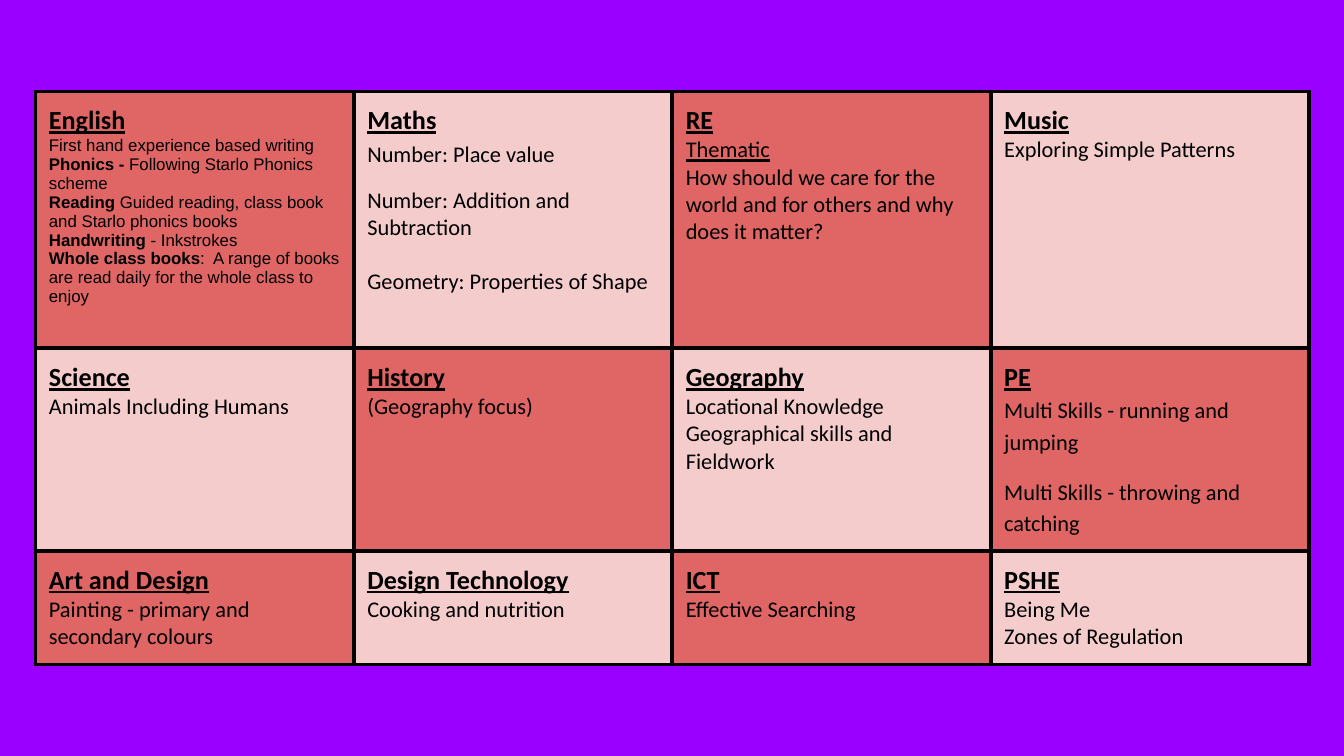
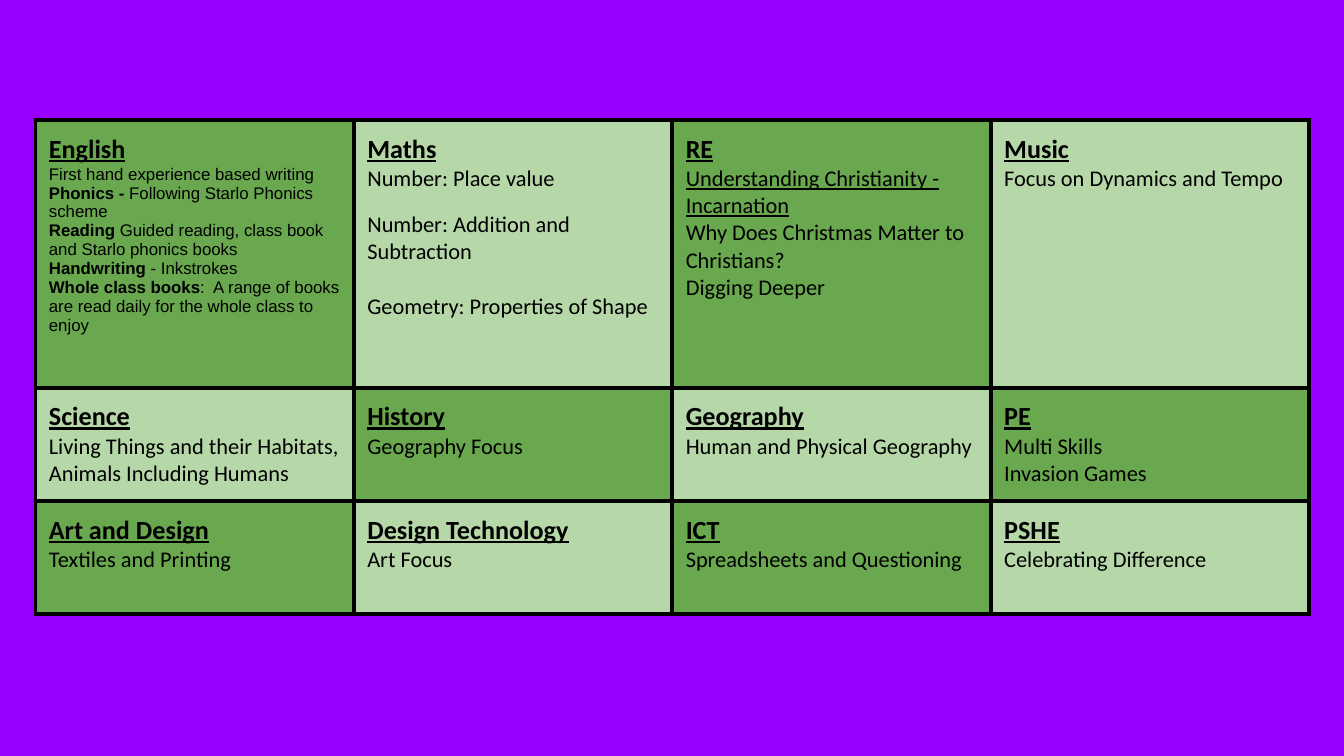
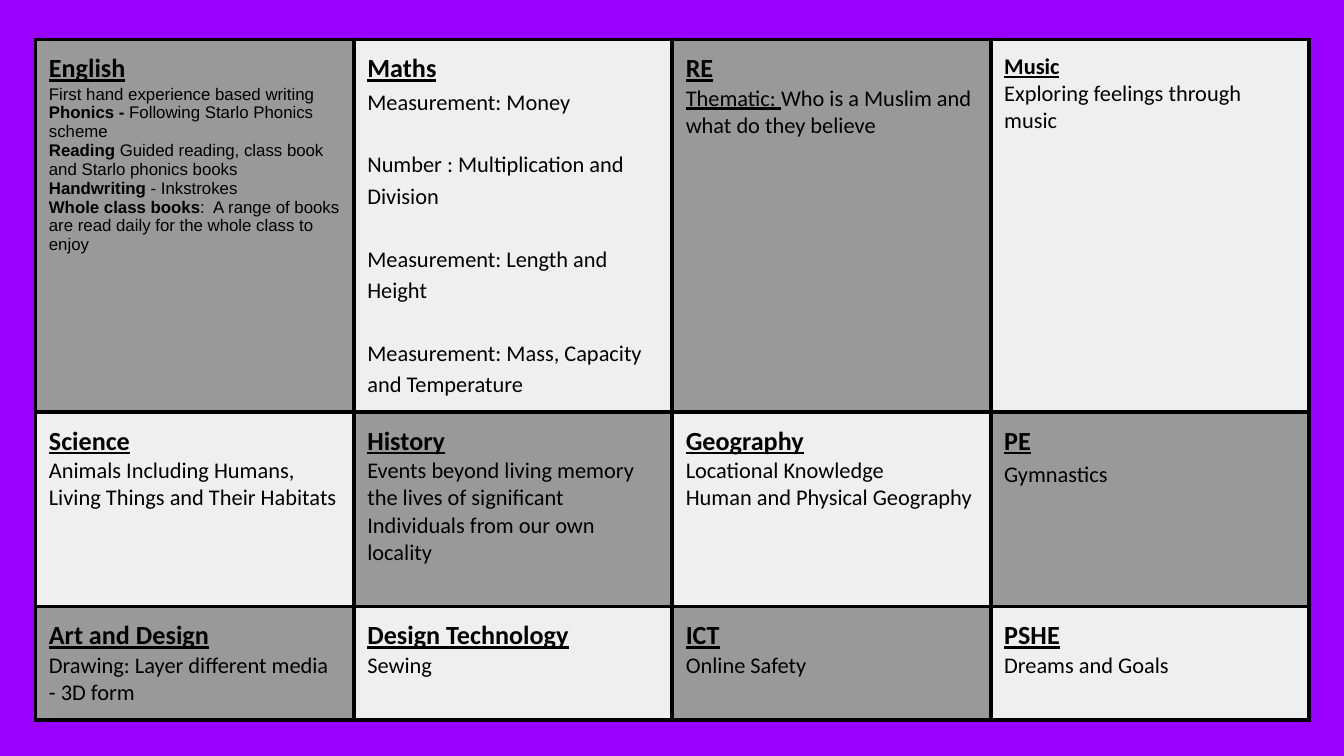
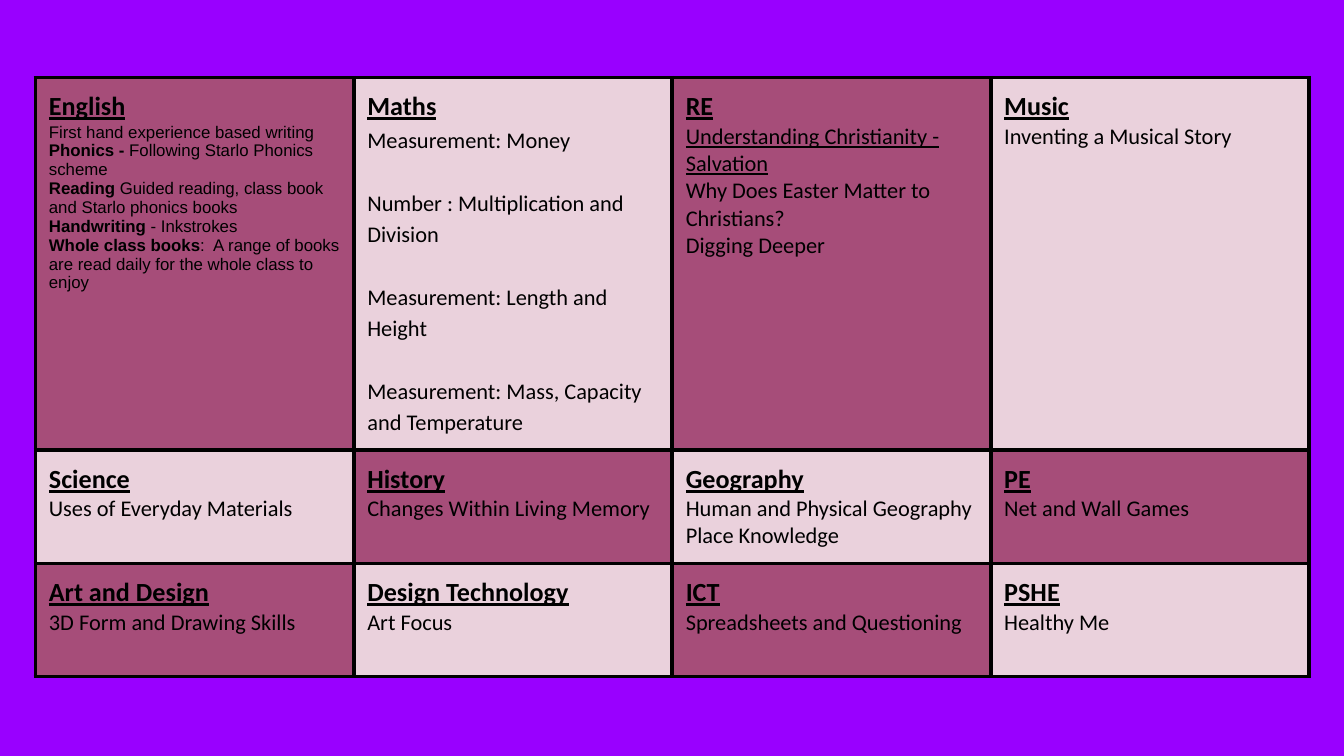
"""Build four half-term curriculum overviews, one table of subjects per slide."""
import lxml.etree
import pptx
import pptx.dml.color
import pptx.oxml.ns
import pptx.util

Pt = pptx.util.Pt
RGBColor = pptx.dml.color.RGBColor

PURPLE = RGBColor(0x99, 0x00, 0xFF)
BLACK = RGBColor(0x00, 0x00, 0x00)
RED, PALE_RED = RGBColor(0xE0, 0x66, 0x66), RGBColor(0xF4, 0xCC, 0xCC)
GREEN, PALE_GREEN = RGBColor(0x6A, 0xA8, 0x4F), RGBColor(0xB6, 0xD7, 0xA8)
GREY, PALE_GREY = RGBColor(0x99, 0x99, 0x99), RGBColor(0xEF, 0xEF, 0xEF)
PLUM, PALE_PLUM = RGBColor(0xA6, 0x4D, 0x79), RGBColor(0xEA, 0xD1, 0xDC)

COLUMNS = 4
COLUMN_WIDTH = 170.6
TABLE_LEFT = 19
LOWER_ROW = 60.5
CELL_MARGIN = Pt(7.2)
BORDER = Pt(2.25)
LOOSE = 1.15

SUBJECTS = ["English", "Maths", "RE", "Music",
            "Science", "History", "Geography", "PE",
            "Art and Design", "Design Technology", "ICT", "PSHE"]

ENGLISH = [
    [("First hand experience based writing ", False), ("Phonics -", True),
     (" Following Starlo Phonics scheme", False)],
    [("Reading ", True), ("Guided reading, class book and Starlo phonics books", False)],
    [("Handwriting", True), (" - Inkstrokes", False)],
    [("Whole class books", True),
     (":  A range of books are read daily for the whole class to enjoy", False)],
]


def line(plain="", underlined="", spacing=1.0, before=0):
    """Describe one body paragraph."""
    return underlined, plain, spacing, before


def add_span(para, text, size, font="Calibri", bold=False, underline=False):
    """Add one formatted run to a paragraph."""
    span = para.add_run()
    span.text = text
    span.font.size = Pt(size)
    span.font.name = font
    span.font.bold = bold
    span.font.underline = underline
    span.font.color.rgb = BLACK


SHAPE_MATHS = [line("Number: Addition and Subtraction", before=10),
               line("Geometry: Properties of Shape", before=14.6)]
MEASURE_MATHS = [line("Measurement: Money", spacing=LOOSE)] + [
    line(topic, spacing=LOOSE, before=16.8)
    for topic in ["Number : Multiplication and Division",
                  "Measurement: Length and Height",
                  "Measurement: Mass, Capacity and Temperature"]]

TERMS = [
    {"top": 49, "rows": [137.5, LOWER_ROW, LOWER_ROW], "dark": RED, "pale": PALE_RED,
     "topics": [
         [line("Number: Place value", spacing=LOOSE)] + SHAPE_MATHS,
         [line(underlined="Thematic"),
          line("How should we care for the world and for others and why does it matter?")],
         [line("Exploring Simple Patterns")],
         [line("Animals Including Humans")],
         [line("(Geography focus)")],
         [line("Locational Knowledge"), line("Geographical skills and Fieldwork")],
         [line("Multi Skills - running and jumping", spacing=LOOSE),
          line("Multi Skills - throwing and catching", spacing=LOOSE, before=10)],
         [line("Painting - primary and secondary colours")],
         [line("Cooking and nutrition")],
         [line("Effective Searching")],
         [line("Being Me"), line("Zones of Regulation")],
     ]},
    {"top": 64.2, "rows": [143.5, LOWER_ROW, LOWER_ROW], "dark": GREEN, "pale": PALE_GREEN,
     "topics": [
         [line("Number: Place value")] + SHAPE_MATHS,
         [line(underlined="Understanding Christianity - Incarnation"),
          line("Why Does Christmas Matter to Christians?"),
          line("Digging Deeper")],
         [line("Focus on Dynamics and Tempo")],
         [line("Living Things and their Habitats, Animals Including Humans")],
         [line("Geography Focus")],
         [line("Human and Physical Geography")],
         [line("Multi Skills"), line("Invasion Games")],
         [line("Textiles and Printing")],
         [line("Art Focus")],
         [line("Spreadsheets and Questioning")],
         [line("Celebrating Difference")],
     ]},
    {"top": 21.2, "rows": [141, 104.2, LOWER_ROW], "dark": GREY, "pale": PALE_GREY,
     "small_heading": "Music",
     "topics": [
         MEASURE_MATHS,
         [line("Who is a Muslim and what do they believe", underlined="Thematic: ")],
         [line("Exploring feelings through music")],
         [line("Animals Including Humans, Living Things and Their Habitats")],
         [line("Events beyond living memory"),
          line("the lives of significant Individuals from our own locality")],
         [line("Locational Knowledge"), line("Human and Physical Geography")],
         [line("Gymnastics", spacing=LOOSE)],
         [line("Drawing: Layer different media - 3D form")],
         [line("Sewing")],
         [line("Online Safety")],
         [line("Dreams and Goals")],
     ]},
    {"top": 41.6, "rows": [139.7, LOWER_ROW, LOWER_ROW], "dark": PLUM, "pale": PALE_PLUM,
     "topics": [
         MEASURE_MATHS,
         [line(underlined="Understanding Christianity - Salvation"),
          line("Why Does Easter Matter to Christians?"),
          line("Digging Deeper")],
         [line("Inventing a Musical Story")],
         [line("Uses of Everyday Materials")],
         [line("Changes Within Living Memory")],
         [line("Human and Physical Geography"), line("Place Knowledge")],
         [line("Net and Wall Games")],
         [line("3D Form and Drawing Skills")],
         [line("Art Focus")],
         [line("Spreadsheets and Questioning")],
         [line("Healthy Me")],
     ]},
]

deck = pptx.Presentation()
deck.slide_width = Pt(720)
deck.slide_height = Pt(405)

for term in TERMS:
    page = deck.slides.add_slide(deck.slide_layouts[6])
    page.background.fill.solid()
    page.background.fill.fore_color.rgb = PURPLE

    table = page.shapes.add_table(
        len(term["rows"]), COLUMNS, Pt(TABLE_LEFT), Pt(term["top"]),
        Pt(COLUMNS * COLUMN_WIDTH), Pt(sum(term["rows"]))).table
    table.first_row = False
    table.horz_banding = False
    for column in table.columns:
        column.width = Pt(COLUMN_WIDTH)
    for row, height in zip(table.rows, term["rows"]):
        row.height = Pt(height)

    for index, subject in enumerate(SUBJECTS):
        row_index, column_index = divmod(index, COLUMNS)
        cell = table.cell(row_index, column_index)
        cell.margin_left = cell.margin_right = CELL_MARGIN
        cell.margin_top = cell.margin_bottom = CELL_MARGIN

        properties = cell._tc.get_or_add_tcPr()
        for side in ["a:lnL", "a:lnR", "a:lnT", "a:lnB"]:
            edge = lxml.etree.SubElement(properties, pptx.oxml.ns.qn(side), w=str(BORDER))
            paint = lxml.etree.SubElement(edge, pptx.oxml.ns.qn("a:solidFill"))
            lxml.etree.SubElement(paint, pptx.oxml.ns.qn("a:srgbClr"), val=str(BLACK))
        cell.fill.solid()
        is_dark = (row_index + column_index) % 2 == 0
        cell.fill.fore_color.rgb = term["dark"] if is_dark else term["pale"]

        frame = cell.text_frame
        heading_size = 12 if subject == term.get("small_heading") else 14
        add_span(frame.paragraphs[0], subject, heading_size, bold=True, underline=True)

        if subject == "English":
            for spans in ENGLISH:
                para = frame.add_paragraph()
                for text, bold in spans:
                    add_span(para, text, 9, font="Arial", bold=bold)
            continue

        for underlined, plain, spacing, before in term["topics"][index - 1]:
            para = frame.add_paragraph()
            para.line_spacing = spacing
            para.space_before = Pt(before)
            if underlined:
                add_span(para, underlined, 12, underline=True)
            if plain:
                add_span(para, plain, 12)

deck.save("out.pptx")
